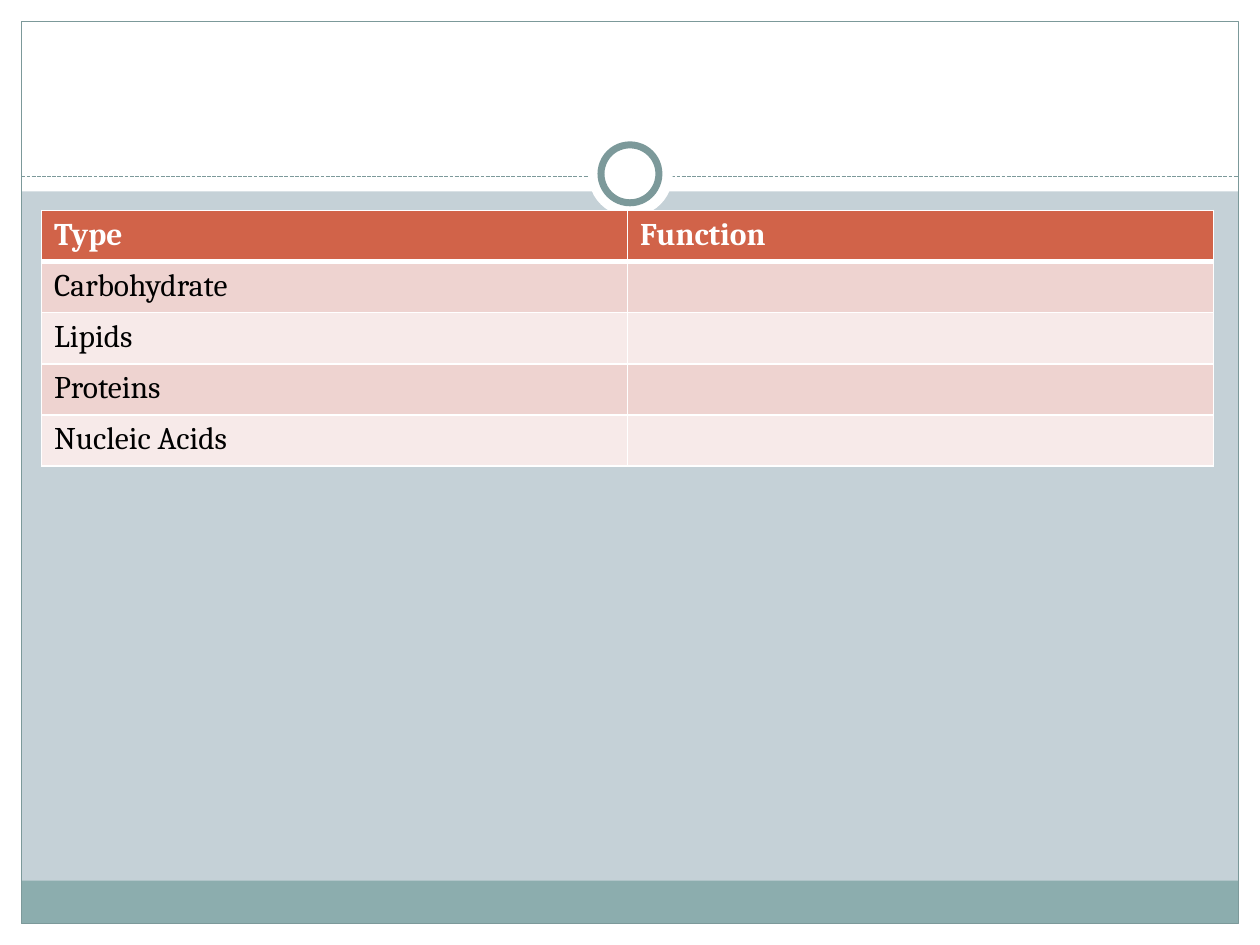
from typing import NamedTuple, Optional

from lxml.etree import SubElement
from pptx import Presentation
from pptx.dml.color import RGBColor
from pptx.enum.dml import MSO_LINE
from pptx.enum.shapes import MSO_CONNECTOR, MSO_SHAPE as Preset
from pptx.oxml.ns import qn
from pptx.util import Inches, Pt

COLORS = {
    "background": "C5D1D7",
    "white": "FFFFFF",
    "black": "000000",
    "footer": "8CADAE",
    "outline": "7C999A",
    "header": "D16349",
    "odd_row": "EED3D0",
    "even_row": "F7EAE9",
}
FONT = "Cambria"
WIDTH, HEIGHT, MARGIN = 10, 7.5, 0.17


class Panel(NamedTuple):
    preset: Preset
    left: float
    top: float
    width: float
    height: float
    fill: Optional[str] = None
    line: Optional[str] = None
    line_width: float = 0.75


def rgb(name: str) -> RGBColor:
    return RGBColor.from_string(COLORS[name])


def draw_panel(slide, panel: Panel) -> None:
    box = map(Inches, (panel.left, panel.top, panel.width, panel.height))
    shape = slide.shapes.add_shape(panel.preset, *box)
    shape.shadow.inherit = False
    if panel.fill:
        shape.fill.solid()
        shape.fill.fore_color.rgb = rgb(panel.fill)
    else:
        shape.fill.background()
    if panel.line:
        shape.line.color.rgb = rgb(panel.line)
        shape.line.width = Pt(panel.line_width)
    else:
        shape.line.fill.background()


def draw_divider(slide, y: float) -> None:
    divider = slide.shapes.add_connector(
        MSO_CONNECTOR.STRAIGHT,
        Inches(MARGIN), Inches(y), Inches(WIDTH - MARGIN), Inches(y))
    divider.line.color.rgb = rgb("outline")
    divider.line.width = Pt(0.75)
    divider.line.dash_style = MSO_LINE.SQUARE_DOT
    SubElement(divider._element.spPr, qn("a:effectLst"))


def set_border(cell, side: str, points: float) -> None:
    properties = cell._tc.get_or_add_tcPr()
    border = SubElement(properties, qn(f"a:ln{side}"), w=str(Pt(points)))
    fill = SubElement(border, qn("a:solidFill"))
    SubElement(fill, qn("a:srgbClr"), val=COLORS["white"])


def format_cell(cell, text: str, row: int) -> None:
    is_header = row == 0
    for side in "LRTB":
        beside_header = (row, side) in ((0, "B"), (1, "T"))
        set_border(cell, side, 3 if beside_header else 1)
    cell.fill.solid()
    band = "odd_row" if row % 2 else "even_row"
    cell.fill.fore_color.rgb = rgb("header" if is_header else band)
    cell.text_frame.text = text
    font = cell.text_frame.paragraphs[0].font
    for run in cell.text_frame.paragraphs[0].runs:
        font = run.font
    font.name = FONT
    font.size = Pt(18)
    font.bold = is_header
    font.color.rgb = rgb("white" if is_header else "black")


def draw_table(slide, rows: list[tuple[str, str]]) -> None:
    frame = slide.shapes.add_table(
        len(rows), len(rows[0]),
        Inches(0.33), Inches(1.67), Inches(9.3), Inches(2.03))
    for row, texts in enumerate(rows):
        for column, text in enumerate(texts):
            format_cell(frame.table.cell(row, column), text, row)


def main() -> None:
    prs = Presentation()
    prs.slide_width, prs.slide_height = Inches(WIDTH), Inches(HEIGHT)
    slide = prs.slides.add_slide(prs.slide_layouts[6])
    slide.background.fill.solid()
    slide.background.fill.fore_color.rgb = rgb("background")

    # White margins, footer band and page outline
    inner_width, inner_height = WIDTH - 2 * MARGIN, HEIGHT - 2 * MARGIN
    page_panels = [
        Panel(Preset.RECTANGLE, 0, HEIGHT - MARGIN, WIDTH, MARGIN, "white"),
        Panel(Preset.RECTANGLE, 0, 0, WIDTH, 1.52, "white"),
        Panel(Preset.RECTANGLE, 0, 0, MARGIN, HEIGHT, "white"),
        Panel(Preset.RECTANGLE, WIDTH - MARGIN, 0, MARGIN, HEIGHT, "white"),
        Panel(Preset.RECTANGLE, MARGIN, 6.99, inner_width, 0.34, "footer"),
        Panel(Preset.RECTANGLE, MARGIN, MARGIN, inner_width, inner_height,
              line="outline"),
    ]
    for panel in page_panels:
        draw_panel(slide, panel)

    # Dashed divider with the ring on it
    draw_divider(slide, 1.4)
    draw_panel(slide, Panel(Preset.OVAL, 4.67, 1.05, 0.67, 0.67, "white"))
    draw_panel(slide, Panel(Preset.OVAL, 4.77, 1.15, 0.46, 0.46, "white",
                            "outline", 4))

    # Biomolecule table
    draw_table(slide, [
        ("Type", "Function"),
        ("Carbohydrate", ""),
        ("Lipids", ""),
        ("Proteins", ""),
        ("Nucleic Acids", ""),
    ])

    prs.save("out.pptx")


if __name__ == "__main__":
    main()
